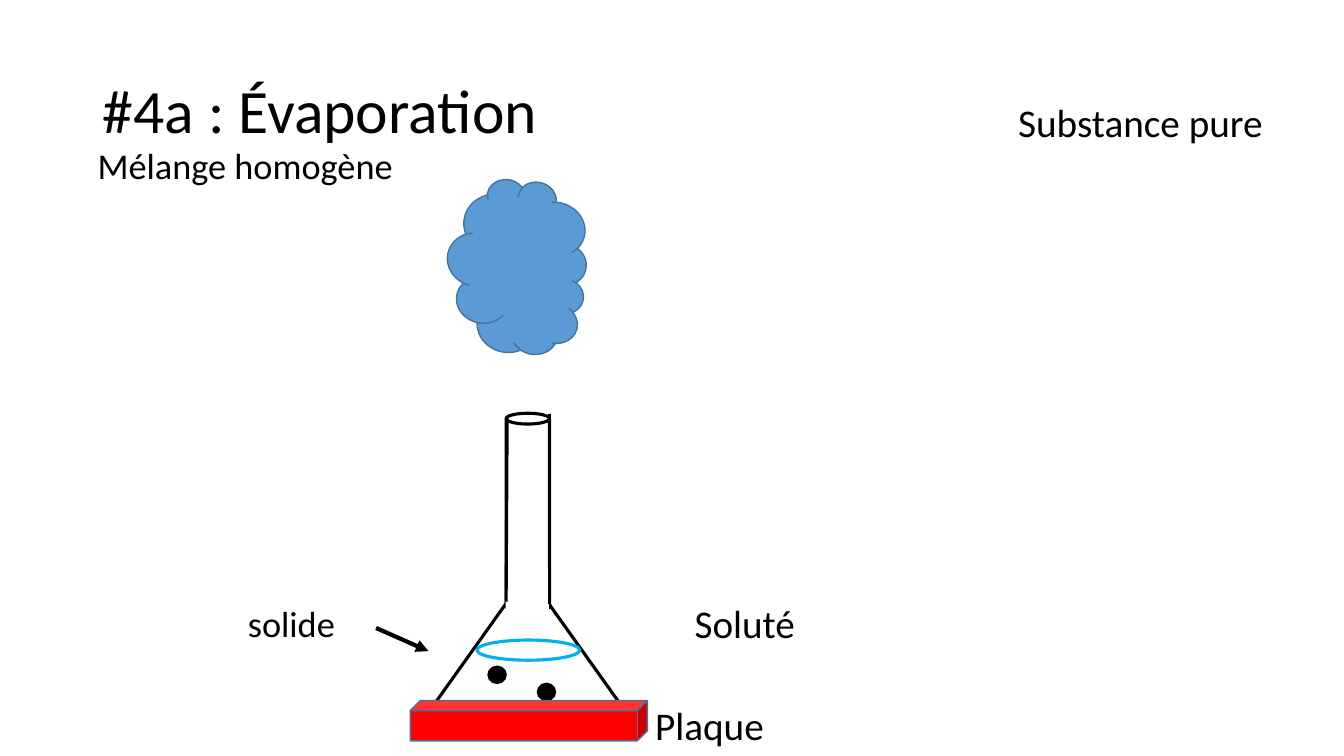
import pptx
import pptx.util
import pptx.dml.color
import pptx.enum.shapes
import pptx.enum.text
import pptx.oxml
import pptx.oxml.ns
from dataclasses import dataclass

Inches = pptx.util.Inches
Pt = pptx.util.Pt
Shape = pptx.enum.shapes.MSO_SHAPE
Anchor = pptx.enum.text.MSO_ANCHOR


@dataclass(frozen=True)
class Theme:
    font: str = "Calibri"
    black: str = "000000"
    white: str = "FFFFFF"
    liquid: str = "00B0F0"
    vapour: str = "5B9BD5"
    outline: str = "43739E"
    heat: str = "FF0000"
    title_size: float = 44
    label_size: float = 28
    small_size: float = 25.9
    thin: float = 1
    glass: float = 2.25
    arrow: float = 3


def rgb(value):
    return pptx.dml.color.RGBColor.from_string(value)


def write_text(frame, text, *, font, size, color, spacing=0.9, before=0, anchor=Anchor.TOP):
    """Put one formatted paragraph into a text frame."""
    frame.word_wrap = True
    frame.auto_size = pptx.enum.text.MSO_AUTO_SIZE.NONE
    frame.vertical_anchor = anchor
    para = frame.paragraphs[0]
    para.alignment = pptx.enum.text.PP_ALIGN.LEFT
    para.line_spacing = spacing
    para.space_before = Pt(before)
    span = para.add_run()
    span.text = text
    span.font.name = font
    span.font.size = Pt(size)
    span.font.color.rgb = rgb(color)


class Page:
    def __init__(self, deck, theme):
        self.theme = theme
        self.slide = deck.slides.add_slide(deck.slide_layouts[5])

    def title(self, text, left, top, width, height):
        box = self.slide.shapes.title
        box.left, box.top, box.width, box.height = map(Inches, (left, top, width, height))
        write_text(box.text_frame, text, font=self.theme.font, size=self.theme.title_size,
                   color=self.theme.black, anchor=Anchor.MIDDLE)

    def label(self, text, left, top, width, height, size, spacing=0.9):
        box = self.slide.shapes.add_textbox(*map(Inches, (left, top, width, height)))
        write_text(box.text_frame, text, font=self.theme.font, size=size,
                   color=self.theme.black, spacing=spacing, before=10)

    def shape(self, kind, left, top, width, height, fill=None, line=None, weight=1, rotation=0):
        shape = self.slide.shapes.add_shape(kind, *map(Inches, (left, top, width, height)))
        shape.shadow.inherit = False
        shape.rotation = rotation
        if fill:
            shape.fill.solid()
            shape.fill.fore_color.rgb = rgb(fill)
        else:
            shape.fill.background()
        if line:
            shape.line.color.rgb = rgb(line)
            shape.line.width = Pt(weight)
        else:
            shape.line.fill.background()

    def line(self, start, end, weight, arrow=False):
        line = self.slide.shapes.add_connector(
            pptx.enum.shapes.MSO_CONNECTOR.STRAIGHT, *map(Inches, (*start, *end)))
        line.line.color.rgb = rgb(self.theme.black)
        line.line.width = Pt(weight)
        if arrow:
            head = pptx.oxml.parse_xml(
                f'<a:tailEnd {pptx.oxml.ns.nsdecls("a")} type="triangle"/>')
            line.line._get_or_add_ln().append(head)
        effects = pptx.oxml.parse_xml(f'<a:effectLst {pptx.oxml.ns.nsdecls("a")}/>')
        line._element.spPr.append(effects)


def main():
    deck = pptx.Presentation()
    deck.slide_width, deck.slide_height = Inches(13.33), Inches(7.5)
    theme = Theme()
    page = Page(deck, theme)

    # Heading
    page.title("#4a : Évaporation", 0.92, 0.4, 11.5, 1.45)
    page.label("Mélange homogène", 0.87, 1.42, 3.35, 0.72, theme.small_size)

    # Flask: neck, body, and a patch that opens the joint
    page.shape(Shape.CAN, 5.02, 4.1, 0.43, 1.97, theme.white, theme.black, theme.glass)
    page.shape(Shape.ISOSCELES_TRIANGLE, 4.29, 5.69, 1.88, 1.32,
               line=theme.black, weight=theme.glass)
    page.shape(Shape.RECTANGLE, 4.9, 5.75, 0.66, 0.43, theme.white, rotation=90)

    # Liquid surface and solid grains
    page.shape(Shape.OVAL, 4.73, 6.35, 1.02, 0.2, line=theme.liquid, weight=theme.glass)
    for left, top in ((4.84, 6.61), (5.33, 6.78)):
        page.shape(Shape.OVAL, left, top, 0.18, 0.17, theme.black, theme.black, theme.thin)

    # Vapour
    page.shape(Shape.CLOUD, 4.28, 1.94, 1.72, 1.41, theme.vapour, theme.outline,
               theme.thin, rotation=102.3)

    # Neck walls
    page.line((5.03, 4.13), (5.02, 5.97), theme.glass)
    page.line((5.45, 4.11), (5.45, 5.99), theme.glass)

    # Labels and hot plate
    page.label("solide", 2.36, 6, 1.17, 0.47, theme.small_size, spacing=0.8)
    page.label("Soluté", 6.79, 5.95, 2.01, 0.79, theme.label_size)
    page.label("Substance pure", 10, 0.98, 2.97, 0.79, theme.label_size)
    page.shape(Shape.CUBE, 4.07, 6.95, 2.35, 0.4, theme.heat, theme.outline, theme.thin)
    page.label("Plaque", 6.4, 7, 1.61, 0.52, theme.label_size, spacing=0.8)
    page.line((3.73, 6.23), (4.25, 6.46), theme.arrow, arrow=True)

    deck.save("out.pptx")


if __name__ == "__main__":
    main()
